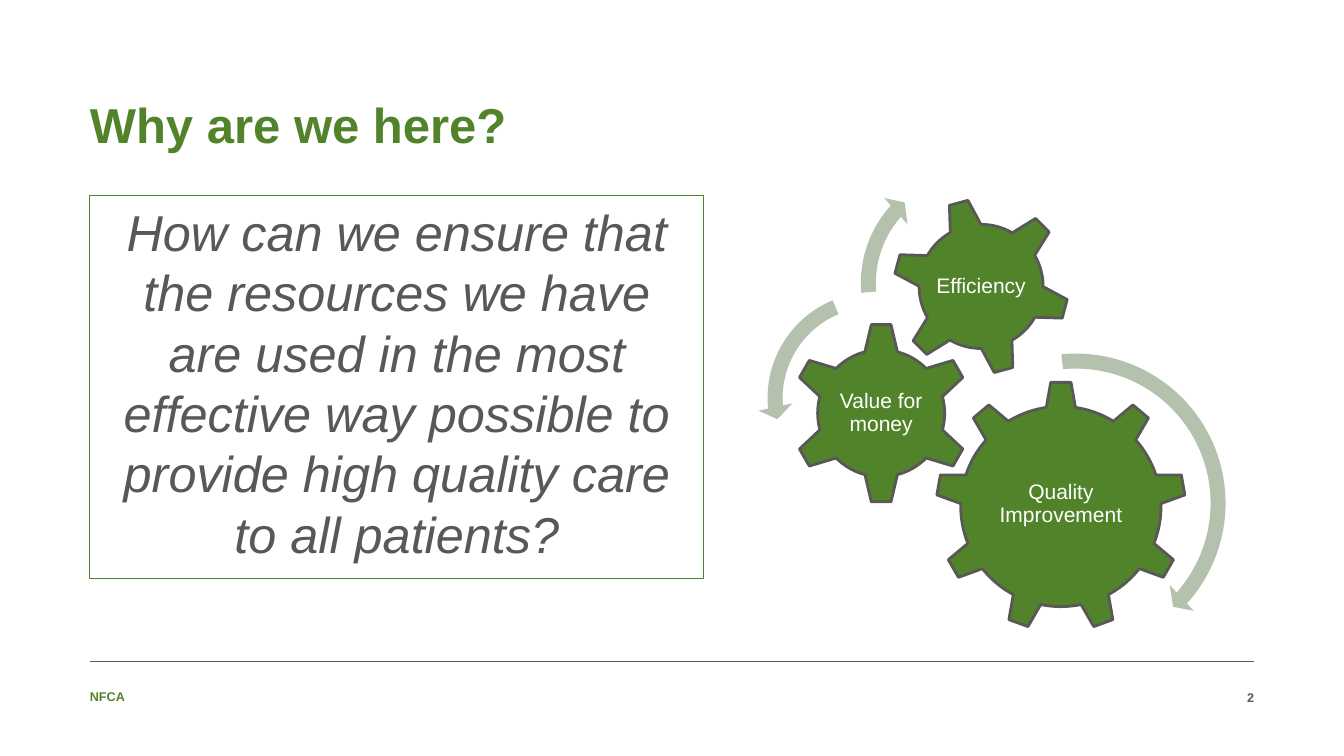
from pptx import Presentation, util as u
from pptx.dml.color import RGBColor
from pptx.enum import shapes, text
from pptx.oxml.ns import qn

GREEN = RGBColor(0x51, 0x83, 0x2B)
GREY = RGBColor(0x59, 0x58, 0x57)
SAGE = RGBColor(0xB3, 0xC1, 0xAD)
WHITE = RGBColor(0xFF, 0xFF, 0xFF)
KIND = shapes.MSO_SHAPE
ALIGN = text.PP_ALIGN
ANCHOR = text.MSO_ANCHOR

deck = Presentation()
deck.slide_width, deck.slide_height = u.Inches(13.33), u.Inches(7.5)
page = deck.slides.add_slide(deck.slide_layouts[6])

# The page is a grid of 16 columns by 9 rows; all places are in cells.
COLUMN, ROW = deck.slide_width / 16, deck.slide_height / 9
LEFT, RIGHT = 1.07, 14.93


def add_shape(kind, left, top, width, height, fill=None, line=None, weight=0.75):
    """Draw a preset shape, without shadow, at a place given in grid cells."""
    shape = page.shapes.add_shape(kind, int(left * COLUMN), int(top * ROW),
                                  int(width * COLUMN), int(height * ROW))
    shape.shadow.inherit = False
    for paint, colour in ((shape.fill, fill), (shape.line.fill, line)):
        if colour is None:
            paint.background()
        else:
            paint.solid()
            paint.fore_color.rgb = colour
    if line is not None:
        shape.line.width = u.Pt(weight)
    return shape


def write(shape, words, size, colour, align=ALIGN.LEFT, anchor=ANCHOR.MIDDLE,
          insets=(0, 0), spacing=1.0):
    """Fill a shape with one paragraph, inset at (sides, top and bottom)."""
    frame = shape.text_frame
    frame.word_wrap = True
    frame.vertical_anchor = anchor
    frame.margin_left = frame.margin_right = u.Inches(insets[0])
    frame.margin_top = frame.margin_bottom = u.Inches(insets[1])
    para = frame.paragraphs[0]
    para.text = words
    para.alignment = align
    para.line_spacing = spacing
    para.font.name, para.font.size = "Arial", u.Pt(size)
    para.font.color.rgb = colour
    return para


# Footer
rule = page.shapes.add_connector(
    shapes.MSO_CONNECTOR.STRAIGHT, int(LEFT * COLUMN), int(7.87 * ROW),
    int(RIGHT * COLUMN), int(7.87 * ROW))
rule.line.color.rgb, rule.line.width = GREY, u.Pt(0.25)
properties = rule._element.spPr
properties.append(properties.makeelement(qn("a:effectLst"), {}))

footer = add_shape(KIND.RECTANGLE, LEFT, 8.11, 3.78, 0.37, fill=WHITE)
write(footer, "NFCA", 9, GREEN).font.bold = True
number = add_shape(KIND.RECTANGLE, RIGHT - 0.63, 8.21, 0.63, 0.18)
write(number, "2", 9, GREY, ALIGN.RIGHT).font.bold = True

# Title and question
title = add_shape(KIND.RECTANGLE, LEFT, 1.12, RIGHT - LEFT, 0.71)
write(title, "Why are we here?", 35, GREEN, anchor=ANCHOR.BOTTOM).font.bold = True

question = add_shape(KIND.RECTANGLE, LEFT, 2.33, 7.31, 4.56, line=GREEN)
write(question, "How can we ensure that the resources we have are used in the "
      "most effective way possible to provide high quality care to all patients?",
      36, GREY, ALIGN.CENTER, ANCHOR.TOP, (0.15, 0.05)).font.italic = True

# Gears: kind, centre, size, rotation, label, label centre and width
gears = [
    (KIND.GEAR_9, 12.63, 6.03, 2.98, 0, "Quality Improvement", 6.0, 1.78),
    (KIND.GEAR_6, 10.49, 4.92, 2.16, 0, "Value for money", 4.92, 1.09),
    (KIND.GEAR_6, 11.68, 3.41, 2.11, -15, "Efficiency", 3.41, 1.19),
]
for kind, x, y, size, rotation, words, middle, width in gears:
    gear = add_shape(kind, x - size / 2, y - size / 2, size, size, GREEN, GREY, 2)
    gear.rotation = rotation
    label = add_shape(KIND.RECTANGLE, x - width / 2, middle - 0.55, width, 1.1)
    write(label, words, 15, WHITE, ALIGN.CENTER, insets=(0.02, 0.02), spacing=0.9)

# Turning arrows: kind, centre, size, adjustments
arrows = [
    (KIND.CIRCULAR_ARROW, 12.81, 5.99, 3.8,
     (0.047, 2.99, 25.144, 158.651, 0.055)),
    (KIND.LEFT_CIRCULAR_ARROW, 10.4, 4.74, 2.76,
     (0.065, 4.3, 104.891, 148.378, 0.075)),
    (KIND.CIRCULAR_ARROW, 11.62, 3.37, 2.98,
     (0.06, 3.941, 133.138, 105.082, 0.07)),
]
for kind, x, y, size, adjustments in arrows:
    arrow = add_shape(kind, x - size / 2, y - size / 2, size, size, SAGE)
    for index, value in enumerate(adjustments):
        arrow.adjustments[index] = value

deck.save("out.pptx")
